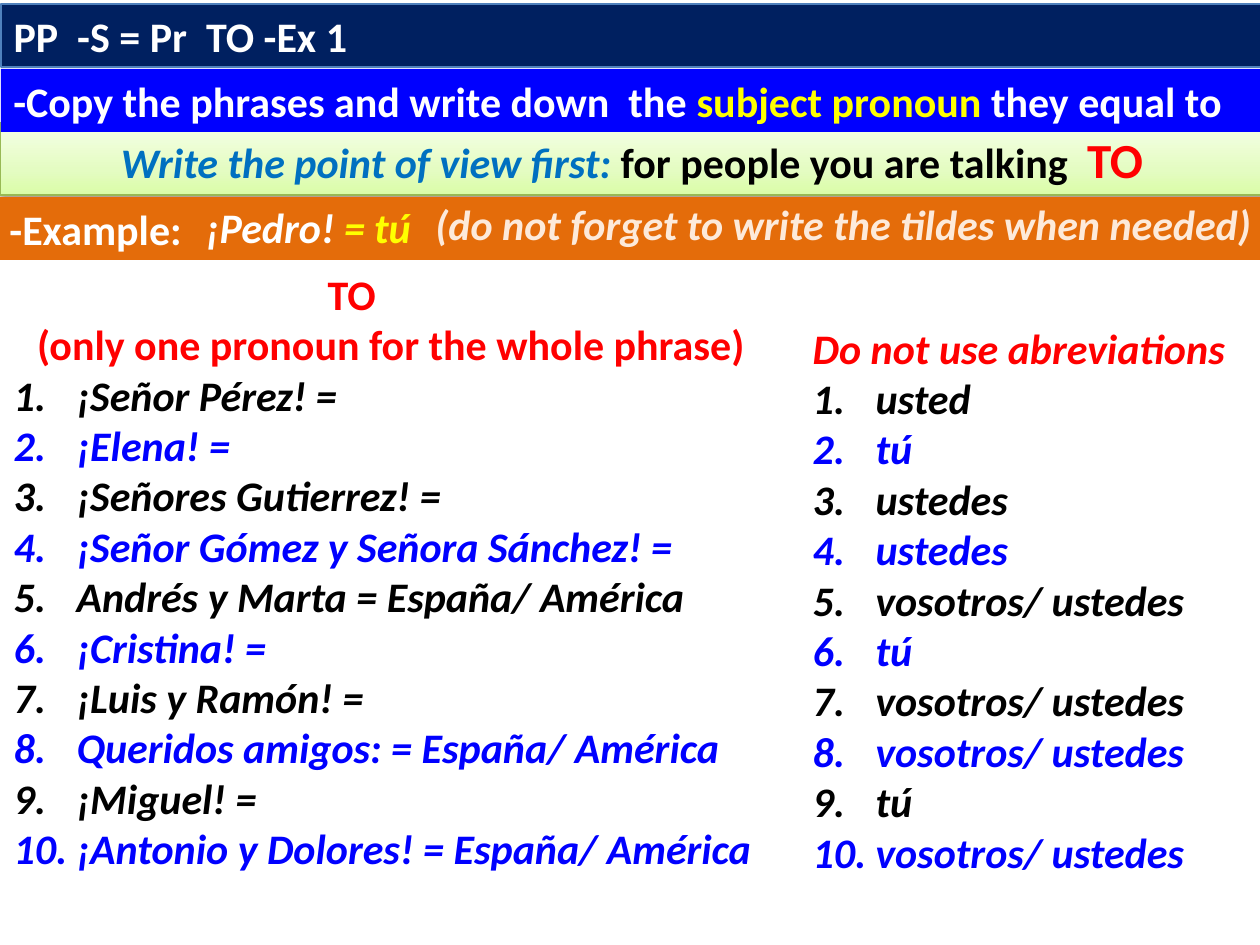
from copy import deepcopy

from lxml.etree import SubElement
from pptx import Presentation
from pptx.dml.color import RGBColor
from pptx.enum.shapes import MSO_SHAPE as Shape
from pptx.enum.text import MSO_ANCHOR as Anchor, MSO_AUTO_SIZE as AutoSize, PP_ALIGN as Align
from pptx.oxml.ns import qn
from pptx.util import Emu, Pt

EMU_PER_PX = 914400 / 126
LINE_HEIGHT = 51
LIST_INDENT = 63
COLORS = {
    "white": "FFFFFF", "black": "000000", "red": "FF0000", "yellow": "FFFF00",
    "blue": "0000FF", "navy": "002060", "sky": "0070C0", "orange": "E46C0A",
    "cream": "FDEADA", "steel": "4F81BD", "olive": "98B955",
}
GREEN_STOPS = [(0, "DAFDA7"), (0.35, "E4FCC2"), (1, "F5FFE7")]

PHRASES = [
    "¡Señor Pérez! =", "¡Elena! =", "¡Señores Gutierrez! =",
    "¡Señor Gómez y Señora Sánchez! =", "Andrés y Marta = España/ América",
    "¡Cristina! =", "¡Luis y Ramón! =", "Queridos amigos: = España/ América",
    "¡Miguel! =", "¡Antonio y Dolores! = España/ América",
]
PRONOUNS = [
    "usted", "tú", "ustedes", "ustedes", "vosotros/ ustedes",
    "tú", "vosotros/ ustedes", "vosotros/ ustedes", "tú", "vosotros/ ustedes",
]


def px(length):
    return Emu(round(length * EMU_PER_PX))


def rgb(name):
    return RGBColor.from_string(COLORS[name])


def place(shape, left, top, width, height):
    shape.left, shape.top, shape.width, shape.height = map(px, (left, top, width, height))


def prepare_frame(shape):
    frame = shape.text_frame
    frame.word_wrap = True
    frame.auto_size = AutoSize.NONE
    frame.vertical_anchor = Anchor.TOP
    return frame


def set_indent(paragraph, margin, indent=0):
    properties = paragraph._p.get_or_add_pPr()
    properties.set("marL", str(px(margin)))
    properties.set("indent", str(px(indent)))
    return properties


def write(paragraph, runs, italic=False, align=Align.LEFT):
    """Fill a paragraph with (text, color) runs in bold 24 point."""
    paragraph.alignment = align
    paragraph.space_before = Pt(0)
    font = paragraph.font
    font.name, font.size, font.bold, font.italic = "Calibri", Pt(24), True, italic
    if len(runs) == 1:
        font.color.rgb = rgb(runs[0][1])
    for text, color in runs:
        run = paragraph.add_run()
        run.text = text
        if len(runs) > 1:
            run.font.color.rgb = rgb(color)


def add_bar(slide, box, fill, runs, line=None, align=Align.LEFT):
    bar = slide.shapes.add_shape(Shape.RECTANGLE, *map(px, box))
    bar.shadow.inherit = False
    if fill:
        bar.fill.solid()
        bar.fill.fore_color.rgb = rgb(fill)
    if line:
        bar.line.color.rgb = rgb(line)
        bar.line.width = Pt(0.75)
    else:
        bar.line.fill.background()
    write(prepare_frame(bar).paragraphs[0], runs, align=align)
    return bar


def add_text(slide, box, runs, align=Align.LEFT):
    frame = prepare_frame(slide.shapes.add_textbox(*map(px, box)))
    write(frame.paragraphs[0], runs, italic=True, align=align)
    return frame


def add_green_gradient(bar):
    bar.fill.gradient()
    bar.fill.gradient_angle = 90
    stop_list = bar._element.spPr.find(qn("a:gradFill")).find(qn("a:gsLst"))
    stop_list.insert(1, deepcopy(stop_list[0]))
    for stop, (position, color) in zip(bar.fill.gradient_stops, GREEN_STOPS):
        stop.position = position
        stop.color.rgb = RGBColor.from_string(color)


def add_soft_shadow(bar):
    effects = bar._element.spPr.find(qn("a:effectLst"))
    shadow = SubElement(effects, qn("a:outerShdw"), blurRad=str(Pt(3.1)),
                        dist=str(Pt(1.6)), dir="5400000", rotWithShape="0")
    color = SubElement(shadow, qn("a:srgbClr"), val=COLORS["black"])
    SubElement(color, qn("a:alpha"), val="38000")


def write_heading(paragraph, text, margin=0, italic=False, align=Align.LEFT):
    SubElement(set_indent(paragraph, margin), qn("a:buNone"))
    write(paragraph, [(text, "red")], italic, align)


def write_numbered(frame, items):
    """Add a numbered list whose lines alternate black and blue."""
    for index, item in enumerate(items):
        color = ("black", "blue")[index % 2]
        paragraph = frame.add_paragraph()
        properties = set_indent(paragraph, LIST_INDENT, -LIST_INDENT)
        bullet_color = SubElement(properties, qn("a:buClr"))
        SubElement(bullet_color, qn("a:srgbClr"), val=COLORS[color])
        SubElement(properties, qn("a:buFont"), typeface="+mj-lt")
        SubElement(properties, qn("a:buAutoNum"), type="arabicPeriod")
        write(paragraph, [(item, color)], italic=True)


def fill_title(title):
    place(title, 1, 4, 1260, 63)
    title.fill.solid()
    title.fill.fore_color.rgb = rgb("navy")
    title.line.color.rgb = rgb("steel")
    title.line.width = Pt(0.75)
    write(prepare_frame(title).paragraphs[0], [("PP  -S = Pr  TO -Ex 1", "white")])


def fill_phrases(body):
    place(body, 1, 262, 780, 726)
    frame = prepare_frame(body)
    write_heading(frame.paragraphs[0], "TO", margin=314)
    write_heading(frame.add_paragraph(), "(only one pronoun for the whole phrase)",
                  align=Align.CENTER)
    write_numbered(frame, PHRASES)


def fill_answers(body):
    place(body, 800, 265, 460, 674)
    body.fill.solid()
    body.fill.fore_color.rgb = rgb("white")
    frame = prepare_frame(body)
    frame.margin_top = px(6 + LINE_HEIGHT)  # starts level with the second heading line
    write_heading(frame.paragraphs[0], "Do not use abreviations", italic=True)
    write_numbered(frame, PRONOUNS)


def main():
    presentation = Presentation()
    presentation.slide_width, presentation.slide_height = px(1260), px(945)
    slide = presentation.slides.add_slide(presentation.slide_layouts[3])
    title, phrases, answers = list(slide.placeholders)[:3]

    # Title and the two numbered lists
    fill_title(title)
    fill_phrases(phrases)
    fill_answers(answers)

    # Point of view bar
    view_bar = add_bar(slide, (0, 123, 1264, 72), None, [
        ("Write the point of view first: ", "sky"),
        ("for people you are talking  ", "black"), ("TO", "red"),
    ], line="olive", align=Align.CENTER)
    add_green_gradient(view_bar)
    add_soft_shadow(view_bar)
    view_runs = view_bar.text_frame.paragraphs[0].runs
    view_runs[0].font.italic = True
    view_runs[2].font.size = Pt(28)

    # Instruction bar
    add_bar(slide, (1, 69, 1260, 63), "blue", [
        ("-Copy the phrases and write down  the ", "white"),
        ("subject pronoun ", "yellow"), ("they equal to", "white"),
    ])

    # Example bar with its texts
    add_bar(slide, (-3, 197, 1265, 63), "orange", [("-Example:", "white")])
    example = add_text(slide, (174, 195, 1056, 63), [("¡Pedro!", "white"), (" =", "yellow")])
    example.margin_left = px(32)
    add_text(slide, (423, 192, 847, 63),
             [("(do not forget to write the tildes when needed)", "cream")])
    add_text(slide, (348, 195, 89, 63), [("tú", "yellow")], align=Align.CENTER)

    presentation.save("out.pptx")


if __name__ == "__main__":
    main()
